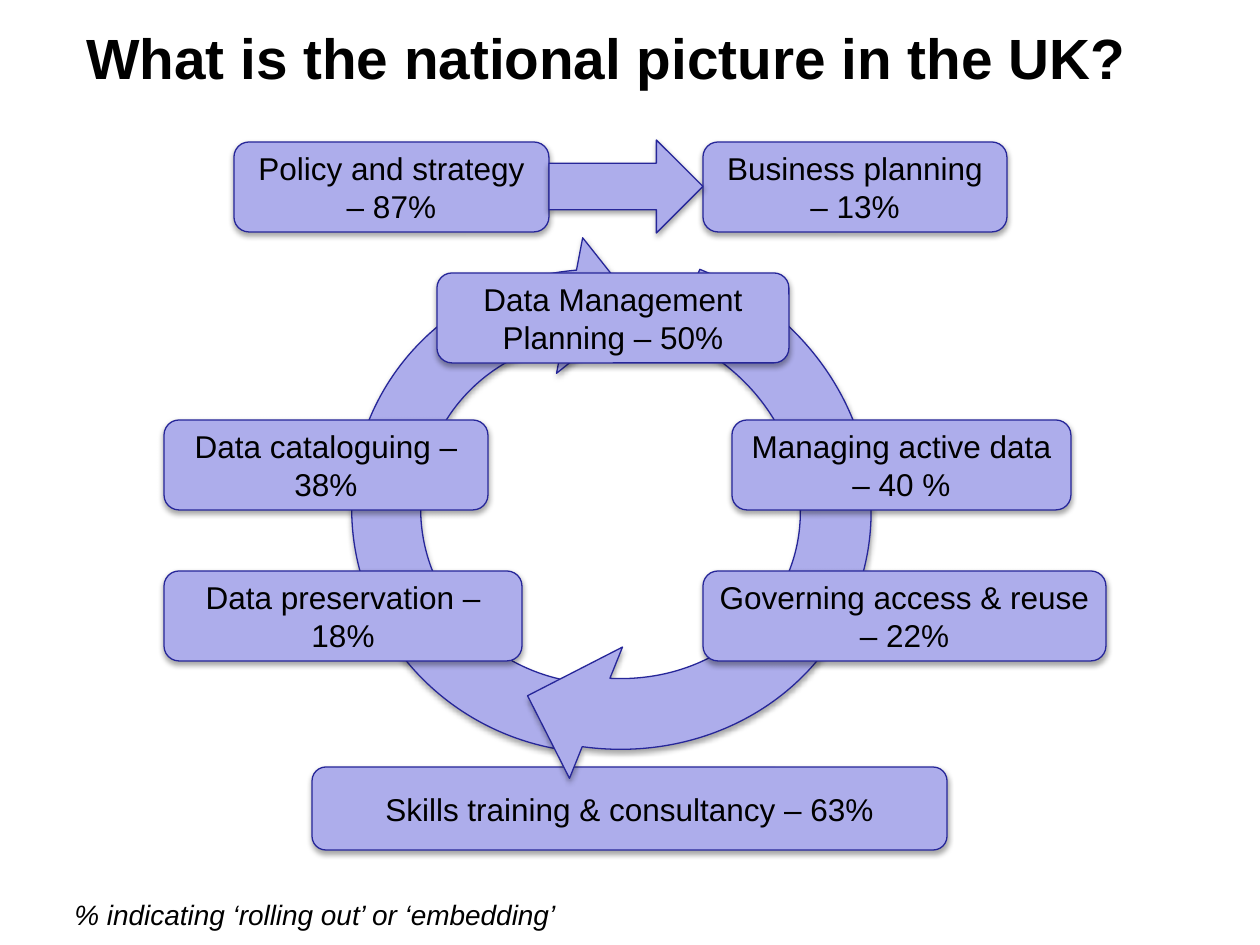
from dataclasses import dataclass

from lxml.etree import SubElement
from pptx import Presentation
from pptx.dml.color import RGBColor
from pptx.enum.shapes import MSO_SHAPE
from pptx.enum.text import MSO_ANCHOR, MSO_AUTO_SIZE, PP_ALIGN
from pptx.oxml.ns import qn
from pptx.shapes.autoshape import Shape
from pptx.shapes.shapetree import GroupShapes
from pptx.text.text import TextFrame
from pptx.util import Emu, Pt

PX_PER_INCH = 126
FONT = "Arial"
COLORS = {"fill": "ADADEB", "line": "262699", "text": "000000", "shadow": "000000"}
BOX_H = 90
TOP_Y, PLAN_Y, MIDDLE_Y, LOWER_Y = 142, 273, 420, 571
LEFT_X, RIGHT_X = 164, 703


@dataclass(frozen=True)
class Box:
    text: str
    x: int
    y: int
    w: int
    h: int = BOX_H


@dataclass(frozen=True)
class Arrow:
    kind: MSO_SHAPE
    x: int
    y: int
    w: int
    h: int
    rotation: float = 0


SKILLS = Box("Skills training & consultancy – 63%", 312, 767, 635, 83)
CYCLE_ARROWS = [
    Arrow(MSO_SHAPE.CIRCULAR_ARROW, 323, 229, 552, 564, 280.9),
    Arrow(MSO_SHAPE.CIRCULAR_ARROW, 324, 197, 566, 604, 112),
]
STAGES = [
    Box("Policy and strategy – 87%", 234, TOP_Y, 315),
    Box("Business planning – 13%", RIGHT_X, TOP_Y, 304),
    Box("Data Management Planning – 50%", 437, PLAN_Y, 352),
    Box("Managing active data – 40 %", 732, MIDDLE_Y, 339),
    Box("Data cataloguing – 38%", LEFT_X, MIDDLE_Y, 324),
    Box("Governing access & reuse – 22%", RIGHT_X, LOWER_Y, 403),
    Box("Data preservation – 18%", LEFT_X, LOWER_Y, 358),
]
POLICY_ARROW = Arrow(MSO_SHAPE.RIGHT_ARROW, 549, 140, 154, 93)


def px(n: int) -> Emu:
    return Emu(round(n * 914400 / PX_PER_INCH))


def rgb(name: str) -> RGBColor:
    return RGBColor.from_string(COLORS[name])


def add_shadow(sp: Shape) -> None:
    sp.shadow.inherit = False
    effects = sp._element.spPr.find(qn("a:effectLst"))
    shadow = SubElement(effects, qn("a:outerShdw"), blurRad="40000",
                        dist="23000", dir="5400000", rotWithShape="0")
    color = SubElement(shadow, qn("a:srgbClr"), val=COLORS["shadow"])
    SubElement(color, qn("a:alpha"), val="35000")


def write(tf: TextFrame, text: str, size: float, align: PP_ALIGN,
          bold: bool = False, italic: bool = False) -> None:
    p = tf.paragraphs[0]
    p.alignment = align
    r = p.add_run()
    r.text = text
    r.font.name = FONT
    r.font.size = Pt(size)
    r.font.bold = bold
    r.font.italic = italic
    r.font.color.rgb = rgb("text")


def add_styled(shapes: GroupShapes, kind: MSO_SHAPE, item: Box | Arrow) -> Shape:
    sp = shapes.add_shape(kind, px(item.x), px(item.y), px(item.w), px(item.h))
    sp.fill.solid()
    sp.fill.fore_color.rgb = rgb("fill")
    sp.line.color.rgb = rgb("line")
    sp.line.width = Pt(0.75)
    add_shadow(sp)
    return sp


def add_box(shapes: GroupShapes, box: Box) -> None:
    tf = add_styled(shapes, MSO_SHAPE.ROUNDED_RECTANGLE, box).text_frame
    tf.word_wrap = True
    tf.vertical_anchor = MSO_ANCHOR.MIDDLE
    write(tf, box.text, 18, PP_ALIGN.CENTER)


def add_arrow(shapes: GroupShapes, arrow: Arrow) -> None:
    add_styled(shapes, arrow.kind, arrow).rotation = arrow.rotation


def main() -> None:
    prs = Presentation()
    prs.slide_width, prs.slide_height = px(1260), px(945)
    s = prs.slides.add_slide(prs.slide_layouts[6])

    diagram = s.shapes.add_group_shape().shapes
    add_box(diagram, SKILLS)
    for arrow in CYCLE_ARROWS:
        add_arrow(diagram, arrow)
    for stage in STAGES:
        add_box(diagram, stage)
    add_arrow(diagram, POLICY_ARROW)

    tf = s.shapes.add_textbox(px(39), px(0), px(1134), px(158)).text_frame
    tf.word_wrap = True
    tf.vertical_anchor = MSO_ANCHOR.MIDDLE
    tf.margin_bottom = px(50)
    write(tf, "What is the national picture in the UK?", 32.4,
          PP_ALIGN.CENTER, bold=True)

    tf = s.shapes.add_textbox(px(62), px(891), px(512), px(47)).text_frame
    tf.word_wrap = False
    tf.auto_size = MSO_AUTO_SIZE.SHAPE_TO_FIT_TEXT
    write(tf, "% indicating ‘rolling out’ or ‘embedding’", 16,
          PP_ALIGN.LEFT, italic=True)

    prs.save("out.pptx")


if __name__ == "__main__":
    main()
